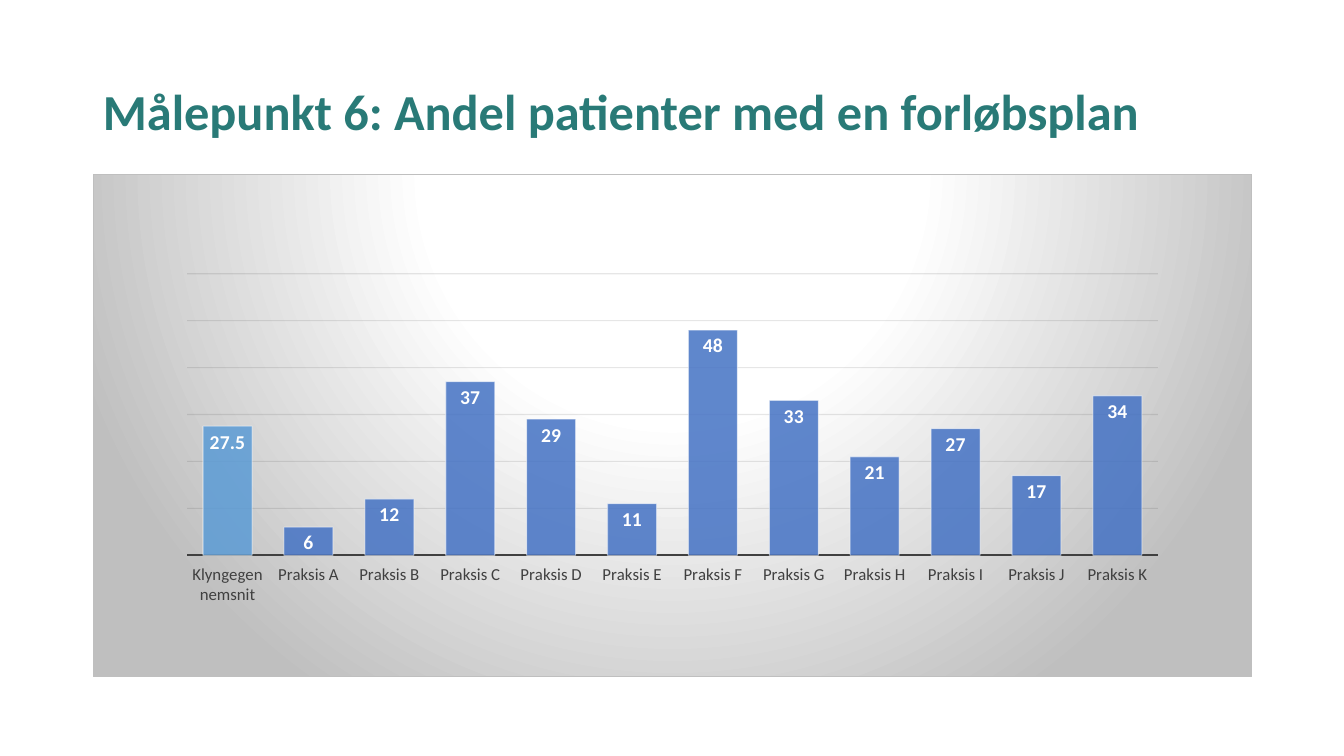
from dataclasses import dataclass

from lxml.etree import SubElement
from pptx import Presentation
from pptx.chart.data import CategoryChartData
from pptx.dml.color import RGBColor
from pptx.enum.chart import XL_CHART_TYPE, XL_LABEL_POSITION, XL_TICK_LABEL_POSITION, XL_TICK_MARK
from pptx.enum.text import MSO_ANCHOR, MSO_AUTO_SIZE, PP_ALIGN
from pptx.oxml import parse_xml
from pptx.oxml.ns import nsdecls, qn
from pptx.util import Inches, Pt


@dataclass(frozen=True)
class Theme:
    font: str = "Calibri"
    heading: str = "297A77"
    practice: str = "4472C4"
    average: str = "5B9BD5"
    axis: str = "404040"
    grid: str = "0D0D0D"
    light: str = "FFFFFF"
    shade: str = "BFBFBF"
    ink: str = "000000"
    heading_size: int = 36
    value_size: int = 14
    category_size: int = 12
    base_size: int = 10
    thin: float = 0.75
    thick: float = 1.5


def apply(target, **values):
    for key, value in values.items():
        setattr(target, key, value)


class SlideBuilder:
    def __init__(self, deck, theme):
        self.deck = deck
        self.theme = theme
        self.slide = deck.slides.add_slide(deck.slide_layouts[5])

    def area(self, left, top, width, height):
        across, down = self.deck.slide_width, self.deck.slide_height
        return [round(share * full) for share, full in
                zip((left, top, width, height), (across, down, across, down))]

    def style_font(self, font, size, color, bold=False):
        apply(font, name=self.theme.font, size=Pt(size), bold=bold)
        font.color.rgb = RGBColor.from_string(color)

    def paint(self, fill, color, opacity=100):
        fill.solid()
        fill.fore_color.rgb = RGBColor.from_string(color)
        if opacity < 100:
            tint = fill._xPr.find(qn("a:solidFill"))[0]
            SubElement(tint, qn("a:alpha"), val=str(opacity * 1000))

    def stroke(self, line, color, width, opacity=100):
        line.width = Pt(width)
        self.paint(line.fill, color, opacity)

    def title(self, wording, *shares):
        heading = self.slide.shapes.title
        apply(heading, **dict(zip(("left", "top", "width", "height"), self.area(*shares))))
        frame = heading.text_frame
        frame.text = wording
        apply(frame, word_wrap=True, auto_size=MSO_AUTO_SIZE.NONE, vertical_anchor=MSO_ANCHOR.MIDDLE)
        paragraph = frame.paragraphs[0]
        apply(paragraph, alignment=PP_ALIGN.LEFT, line_spacing=0.9)
        self.style_font(paragraph.runs[0].font, self.theme.heading_size, self.theme.heading, True)

    def column_chart(self, values, plot_shares, *shares):
        theme = self.theme
        data = CategoryChartData()
        data.categories = list(values)
        data.add_series("Series 1", list(values.values()))
        chart = self.slide.shapes.add_chart(
            XL_CHART_TYPE.COLUMN_CLUSTERED, *self.area(*shares), data).chart
        apply(chart, has_legend=False, has_title=False)
        self.style_font(chart.font, theme.base_size, theme.ink)
        self.style_axes(chart)
        self.style_columns(chart.plots[0])
        self.place_plot(chart, plot_shares)
        self.shade_background(chart)

    def style_axes(self, chart):
        theme = self.theme
        categories, scale = chart.category_axis, chart.value_axis
        apply(categories, major_tick_mark=XL_TICK_MARK.NONE, minor_tick_mark=XL_TICK_MARK.NONE,
              tick_label_position=XL_TICK_LABEL_POSITION.LOW, has_major_gridlines=False)
        self.style_font(categories.tick_labels.font, theme.category_size, theme.axis)
        self.stroke(categories.format.line, theme.axis, theme.thick)
        apply(scale, visible=False, minimum_scale=0, maximum_scale=60, major_unit=10,
              has_major_gridlines=True)
        self.stroke(scale.major_gridlines.format.line, theme.grid, theme.thin, 10)

    def style_columns(self, plot):
        theme = self.theme
        apply(plot, gap_width=65, vary_by_categories=False)
        practices = plot.series[0]
        practices.invert_if_negative = False
        for part, color in ((practices, theme.practice), (practices.points[0], theme.average)):
            self.paint(part.format.fill, color, 85)
            self.stroke(part.format.line, theme.light, theme.thin, 50)
        labels = practices.data_labels
        apply(labels, show_value=True, position=XL_LABEL_POSITION.INSIDE_END)
        self.style_font(labels.font, theme.value_size, theme.light, True)

    def place_plot(self, chart, plot_shares):
        plot_area = chart._chartSpace.chart.plotArea
        for previous in plot_area.findall(qn("c:layout")):
            plot_area.remove(previous)
        settings = [("layoutTarget", "inner"), ("xMode", "edge"), ("yMode", "edge")]
        settings += zip("xywh", plot_shares)
        entries = "".join(f'<c:{key} val="{value}"/>' for key, value in settings)
        plot_area.insert(0, parse_xml(
            f'<c:layout {nsdecls("c")}><c:manualLayout>{entries}</c:manualLayout></c:layout>'))

    def shade_background(self, chart):
        theme = self.theme
        stops = "".join(
            f'<a:gs pos="{share * 1000}"><a:srgbClr val="{color}"/></a:gs>'
            for share, color in ((0, theme.light), (39, theme.light), (100, theme.shade)))
        chart._chartSpace.chart.addnext(parse_xml(
            f'<c:spPr {nsdecls("c", "a")}><a:gradFill><a:gsLst>{stops}</a:gsLst>'
            '<a:path path="circle"><a:fillToRect l="50000" t="-80000" r="50000" b="180000"/>'
            f'</a:path></a:gradFill><a:ln w="{Pt(theme.thin)}"><a:solidFill>'
            f'<a:srgbClr val="{theme.shade}"/></a:solidFill></a:ln></c:spPr>'))


def main():
    deck = Presentation()
    apply(deck, slide_width=Inches(13.33), slide_height=Inches(7.5))
    builder = SlideBuilder(deck, Theme())
    margin, content = 0.92 / 13.33, 11.5 / 13.33
    builder.title("Målepunkt 6: Andel patienter med en forløbsplan",
                  margin, 0.41 / 7.5, content, 1.45 / 7.5)
    shares = {"Klyngegennemsnit": 27.5}
    practice_shares = (6, 12, 37, 29, 11, 48, 33, 21, 27, 17, 34)
    shares.update((f"Praksis {letter}", share)
                  for letter, share in zip("ABCDEFGHIJK", practice_shares))
    builder.column_chart(shares, (0.081, 0.197, 0.838, 0.561),
                         margin, 1.73 / 7.5, content, 4.99 / 7.5)
    deck.save("out.pptx")


if __name__ == "__main__":
    main()
